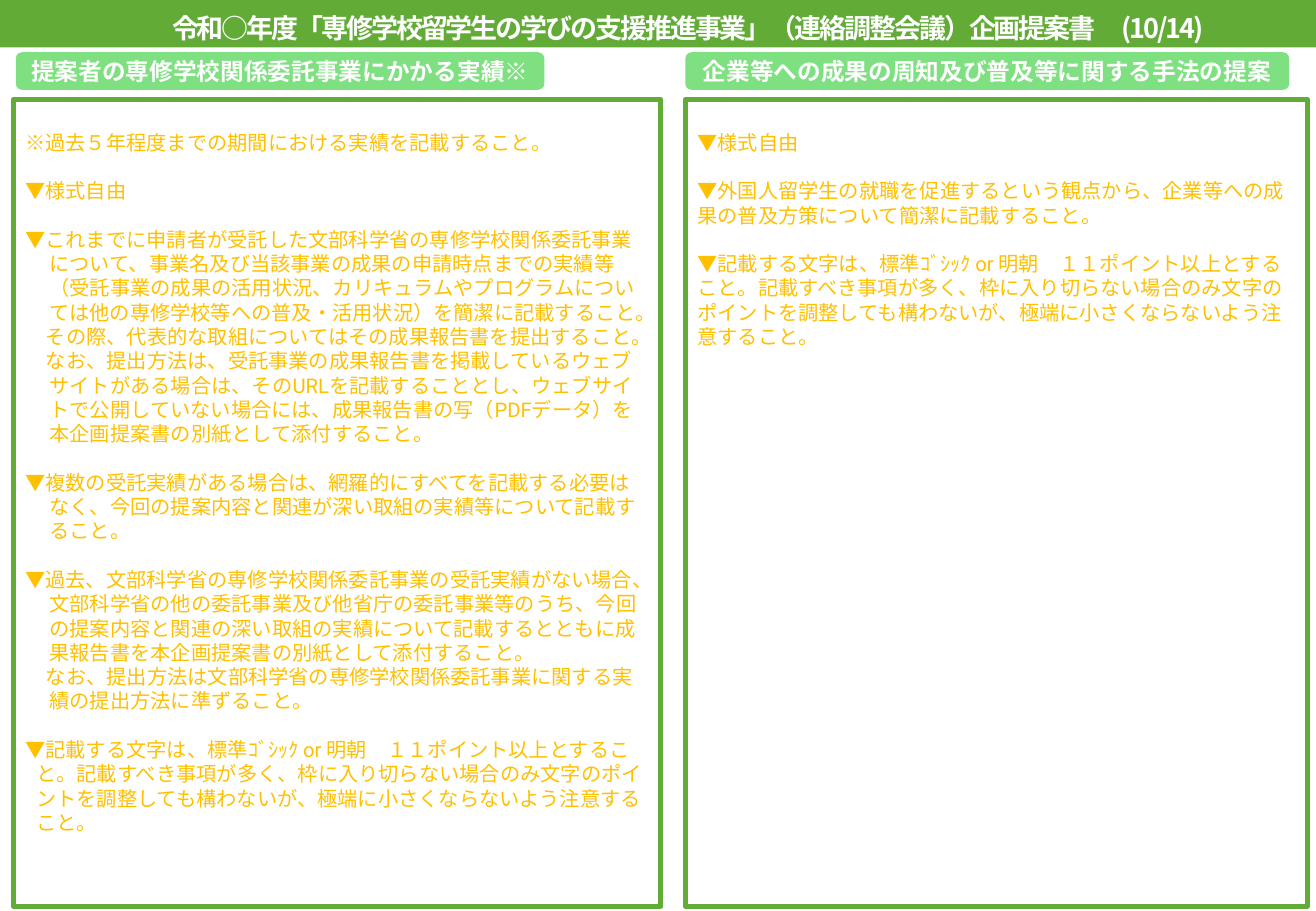
import pptx
import pptx.util
import pptx.dml.color
import pptx.enum.lang
import pptx.enum.shapes
import pptx.enum.text
import lxml.etree

Inches, Pt = pptx.util.Inches, pptx.util.Pt
RGBColor = pptx.dml.color.RGBColor
MSO_SHAPE = pptx.enum.shapes.MSO_SHAPE
PP_ALIGN, MSO_ANCHOR = pptx.enum.text.PP_ALIGN, pptx.enum.text.MSO_ANCHOR

GREEN = RGBColor(0x62, 0xAB, 0x37)
LIGHT_GREEN = RGBColor(0x7E, 0xE0, 0x81)
AMBER = RGBColor(0xFF, 0xC0, 0x00)
WHITE = RGBColor(0xFF, 0xFF, 0xFF)
LATIN, JAPANESE = "Roboto", "Noto Sans CJK JP"

TITLE = "令和○年度「専修学校留学生の学びの支援推進事業」（連絡調整会議）企画提案書　(10/14)"
FONT_RULE = (
    "▼記載する文字は、標準ｺﾞｼｯｸ or 明朝　１１ポイント以上とすること。"
    "記載すべき事項が多く、枠に入り切らない場合のみ文字のポイントを調整しても構わないが、"
    "極端に小さくならないよう注意すること。"
)

# Paragraph styles: left margin, first-line indent (inches), starts a new block
PLAIN = (0, 0, True)
HANGING = (0.2, -0.2, True)
CONTINUED = (0.2, -0.03, False)
SLIGHT = (0.09, -0.09, True)

# Column: left, heading width, frame width, heading, paragraphs
COLUMNS = [
    (0.11, 0.13, 4.35, 5.33, "提案者の専修学校関係委託事業にかかる実績※", [
        (PLAIN, "※過去５年程度までの期間における実績を記載すること。"),
        (PLAIN, "▼様式自由"),
        (HANGING, "▼これまでに申請者が受託した文部科学省の専修学校関係委託事業について、"
                  "事業名及び当該事業の成果の申請時点までの実績等（受託事業の成果の活用状況、"
                  "カリキュラムやプログラムについては他の専修学校等への普及・活用状況）を"
                  "簡潔に記載すること。"),
        (CONTINUED, "その際、代表的な取組についてはその成果報告書を提出すること。"),
        (CONTINUED, "なお、提出方法は、受託事業の成果報告書を掲載しているウェブサイトがある場合は、"
                    "そのURLを記載することとし、ウェブサイトで公開していない場合には、"
                    "成果報告書の写（PDFデータ）を本企画提案書の別紙として添付すること。"),
        (HANGING, "▼複数の受託実績がある場合は、網羅的にすべてを記載する必要はなく、"
                  "今回の提案内容と関連が深い取組の実績等について記載すること。"),
        (HANGING, "▼過去、文部科学省の専修学校関係委託事業の受託実績がない場合、"
                  "文部科学省の他の委託事業及び他省庁の委託事業等のうち、今回の提案内容と"
                  "関連の深い取組の実績について記載するとともに成果報告書を本企画提案書の"
                  "別紙として添付すること。"),
        (CONTINUED, "なお、提出方法は文部科学省の専修学校関係委託事業に関する実績の"
                    "提出方法に準ずること。"),
        (SLIGHT, FONT_RULE),
    ]),
    (5.64, 5.64, 4.97, 5.12, "企業等への成果の周知及び普及等に関する手法の提案", [
        (PLAIN, "▼様式自由"),
        (PLAIN, "▼外国人留学生の就職を促進するという観点から、"
                "企業等への成果の普及方策について簡潔に記載すること。"),
        (PLAIN, FONT_RULE),
    ]),
]

SLIDE_WIDTH, SLIDE_HEIGHT = 10.83, 7.5
BAR_HEIGHT = 0.39
HEADING_TOP, HEADING_HEIGHT = 0.43, 0.31
FRAME_TOP, FRAME_HEIGHT = 0.82, 6.64
LINE_PITCH = Pt(14.4)


def format_text(para, size, color, bold=False, latin=LATIN):
    for span in para.runs:
        font = span.font
        font.size, font.bold = Pt(size), bold
        font.color.rgb = color
        font.name = latin
        font.language_id = pptx.enum.lang.MSO_LANGUAGE_ID.JAPANESE
        east_asian = pptx.oxml.ns.qn("a:ea")
        lxml.etree.SubElement(span.font._element, east_asian, typeface=JAPANESE)


def add_box(page, kind, left, top, width, height):
    box = page.shapes.add_shape(
        kind, Inches(left), Inches(top), Inches(width), Inches(height))
    box.shadow.inherit = False
    return box


def add_heading(page, left, width, text):
    box = add_box(page, MSO_SHAPE.ROUNDED_RECTANGLE,
                  left, HEADING_TOP, width, HEADING_HEIGHT)
    box.fill.solid()
    box.fill.fore_color.rgb = LIGHT_GREEN
    box.line.fill.background()
    frame = box.text_frame
    frame.text = text
    frame.word_wrap = False
    frame.vertical_anchor = MSO_ANCHOR.MIDDLE
    frame.paragraphs[0].alignment = PP_ALIGN.CENTER
    format_text(frame.paragraphs[0], 14, WHITE, bold=True)


def add_guidance(page, left, width, items):
    box = add_box(page, MSO_SHAPE.RECTANGLE, left, FRAME_TOP, width, FRAME_HEIGHT)
    box.fill.background()
    box.line.color.rgb = GREEN
    box.line.width = Pt(3)
    frame = box.text_frame
    frame.word_wrap = True
    frame.vertical_anchor = MSO_ANCHOR.TOP
    frame.margin_top = Inches(0.25)
    frame.text = "\n".join(text for _, text in items)
    for index, (para, (style, _)) in enumerate(zip(frame.paragraphs, items)):
        margin, indent, new_block = style
        para.alignment = PP_ALIGN.LEFT
        para.line_spacing = LINE_PITCH
        if index and new_block:
            para.space_before = LINE_PITCH
        properties = para._p.get_or_add_pPr()
        properties.set("marL", str(Inches(margin)))
        properties.set("indent", str(Inches(indent)))
        format_text(para, 12, AMBER)


def set_title(page):
    title = page.shapes.title
    title.left, title.top = 0, 0
    title.width, title.height = Inches(SLIDE_WIDTH), Inches(BAR_HEIGHT)
    title.fill.solid()
    title.fill.fore_color.rgb = GREEN
    frame = title.text_frame
    frame.text = TITLE
    frame.word_wrap = True
    frame.auto_size = pptx.enum.text.MSO_AUTO_SIZE.NONE
    frame.vertical_anchor = MSO_ANCHOR.MIDDLE
    frame.margin_left, frame.margin_right = Inches(0.49), 0
    frame.margin_top, frame.margin_bottom = Inches(0.07), 0
    para = frame.paragraphs[0]
    para.alignment = PP_ALIGN.CENTER
    format_text(para, 16, WHITE, bold=True, latin=JAPANESE)
    para.runs[0].font._element.set("spc", "-120")


def main():
    deck = pptx.Presentation()
    deck.slide_width, deck.slide_height = Inches(SLIDE_WIDTH), Inches(SLIDE_HEIGHT)
    page = deck.slides.add_slide(deck.slide_layouts[5])
    set_title(page)
    for frame_left, heading_left, heading_width, frame_width, heading, items in COLUMNS:
        add_heading(page, heading_left, heading_width, heading)
        add_guidance(page, frame_left, frame_width, items)
    deck.save("out.pptx")


if __name__ == "__main__":
    main()
